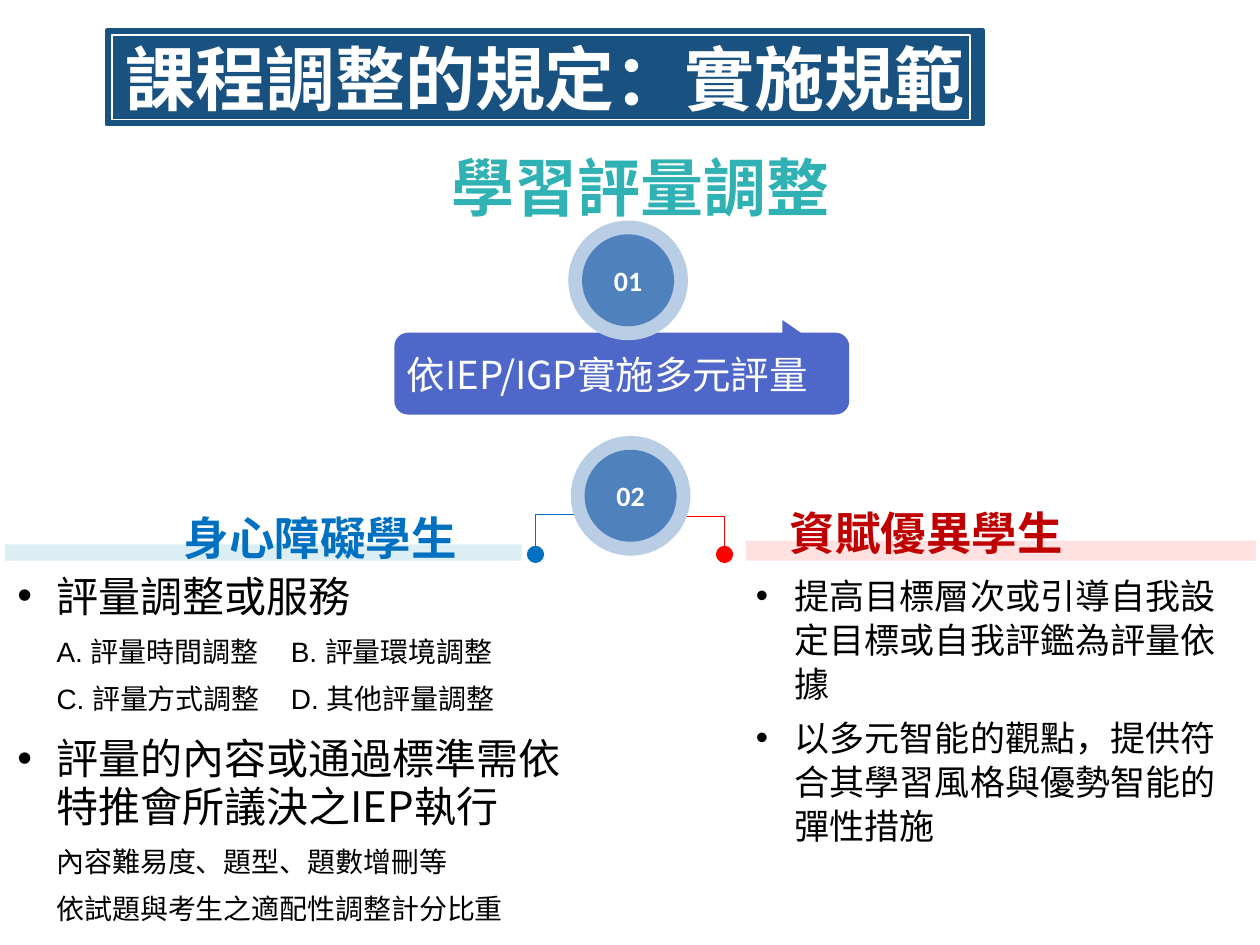
"""Build the slide on adjusting learning assessment."""
from dataclasses import dataclass
from typing import Optional

from lxml.etree import SubElement
from pptx import Presentation
from pptx.dml.color import RGBColor
from pptx.enum.shapes import MSO_CONNECTOR, MSO_SHAPE
from pptx.enum.text import MSO_ANCHOR, PP_ALIGN
from pptx.oxml.ns import qn
from pptx.util import Inches, Pt

WHITE = RGBColor(0xFF, 0xFF, 0xFF)
BLACK = RGBColor(0, 0, 0)
NAVY = RGBColor(0x19, 0x52, 0x80)
TEAL = RGBColor(0x30, 0xB1, 0xB3)
INDIGO = RGBColor(0x4E, 0x67, 0xC8)
RING = RGBColor(0xB9, 0xCD, 0xE5)
DISC = RGBColor(0x4F, 0x81, 0xBD)
BLUE = RGBColor(0x00, 0x70, 0xC0)
RED = RGBColor(0xFF, 0, 0)
CRIMSON = RGBColor(0xC0, 0, 0)
PALE_BLUE = RGBColor(0xDB, 0xEE, 0xF4)
PALE_RED = RGBColor(0xFF, 0xE1, 0xE1)
NOTO = "Noto Sans CJK SC"
Box = tuple[float, float, float, float]


@dataclass
class Style:
    """Look of a run of text."""
    size: float
    color: RGBColor
    face: str = "Calibri"
    bold: bool = True


@dataclass
class Badge:
    """Numbered disc in a ring."""
    label: str
    left: float
    top: float


@dataclass
class Link:
    """Elbow line ending in a dot."""
    start: tuple[float, float]
    end: tuple[float, float]
    turn: int
    color: RGBColor


@dataclass
class Item:
    """Bullet with smaller lines below it."""
    head: str
    notes: tuple[str, ...] = ()


@dataclass
class Column:
    """List of bullets for one group of students."""
    box: Box
    size: float
    pitch: float
    gap: float
    items: tuple[Item, ...]


BADGES = (Badge("01", 4.51, 1.75), Badge("02", 4.53, 3.46))
LINKS = (
    Link((5.81, 3.85), (5.2, 4.34), 270, RED),
    Link((4.18, 3.83), (4.82, 4.33), 90, BLUE),
)
COLUMNS = (
    Column((0.04, 4.5, 4.58, 2.92), 24, 27, 12, (
        Item("評量調整或服務", ("A. 評量時間調整\tB. 評量環境調整",
                          "C. 評量方式調整\tD. 其他評量調整")),
        Item("評量的內容或通過標準需依特推會所議決之IEP執行",
             ("內容難易度、題型、題數增刪等", "依試題與考生之適配性調整計分比重")),
    )),
    Column((5.9, 4.5, 4.06, 2.29), 20, 25, 6, (
        Item("提高目標層次或引導自我設定目標或自我評鑑為評量依據"),
        Item("以多元智能的觀點，提供符合其學習風格與優勢智能的彈性措施"),
    )),
)


def paint(run, style: Style) -> None:
    """Apply a style to a run."""
    font = run.font
    font.name, font.size, font.bold = style.face, Pt(style.size), style.bold
    font.color.rgb = style.color


def write(shape, text: str, style: Style, align=PP_ALIGN.LEFT):
    """Put one styled paragraph in a shape."""
    shape.text_frame.text = text
    para = shape.text_frame.paragraphs[0]
    para.alignment = align
    paint(para.runs[0], style)
    return para


def form(slide, kind, box: Box, fill: Optional[RGBColor],
         line: Optional[RGBColor] = None, width: float = 1):
    """Add a flat preset shape."""
    shape = slide.shapes.add_shape(kind, *map(Inches, box))
    shape.shadow.inherit = False
    if fill is None:
        shape.fill.background()
    else:
        shape.fill.solid()
        shape.fill.fore_color.rgb = fill
    if line is None:
        shape.line.fill.background()
    else:
        shape.line.color.rgb = line
        shape.line.width = Pt(width)
    shape.text_frame.vertical_anchor = MSO_ANCHOR.MIDDLE
    return shape


def label(slide, box: Box, text: str, style: Style, align=PP_ALIGN.LEFT):
    """Add a wrapped text box with one paragraph."""
    shape = slide.shapes.add_textbox(*map(Inches, box))
    shape.text_frame.word_wrap = True
    return write(shape, text, style, align)


def join(slide, link: Link) -> None:
    """Add an elbow line with a dot at its end."""
    ends = map(Inches, link.start + link.end)
    wire = slide.shapes.add_connector(MSO_CONNECTOR.ELBOW, *ends)
    wire.line.color.rgb = link.color
    wire.line.width = Pt(0.5)
    props = wire._element.spPr
    props.find(qn("a:xfrm")).set("rot", str(link.turn * 60000))
    SubElement(props.find(qn("a:ln")), qn("a:tailEnd"),
               type="oval", w="lg", len="lg")
    SubElement(props, qn("a:effectLst"))


def stamp(slide, badge: Badge) -> None:
    """Add a ring and its numbered disc."""
    left, top = badge.left, badge.top
    form(slide, MSO_SHAPE.OVAL, (left, top, 0.95, 0.95), RING)
    disc = form(slide, MSO_SHAPE.OVAL,
                (left + 0.11, top + 0.11, 0.73, 0.73), DISC)
    write(disc, badge.label, Style(16, WHITE), PP_ALIGN.CENTER)


def fill_list(slide, column: Column) -> None:
    """Add a bulleted column."""
    frame = slide.shapes.add_textbox(*map(Inches, column.box)).text_frame
    frame.word_wrap = True
    for index, item in enumerate(column.items):
        para = frame.add_paragraph() if index else frame.paragraphs[0]
        para.text = "\n".join((item.head, *item.notes))
        para.line_spacing = Pt(column.pitch)
        if index:
            para.space_before = Pt(column.gap)
        props = para._p.get_or_add_pPr()
        props.set("marL", str(Inches(0.31)))
        props.set("indent", str(-Inches(0.31)))
        SubElement(props, qn("a:buFont"), typeface="Arial")
        SubElement(props, qn("a:buChar"), char="•")
        if any("\t" in note for note in item.notes):
            tabs = SubElement(props, qn("a:tabLst"))
            SubElement(tabs, qn("a:tab"), pos=str(Inches(2.17)), algn="l")
        head, *notes = para.runs
        paint(head, Style(column.size, BLACK, NOTO, False))
        for note in notes:
            paint(note, Style(16, BLACK, "Arial", False))


def main() -> None:
    """Draw the slide and save it."""
    deck = Presentation()
    deck.slide_width, deck.slide_height = Inches(10), Inches(7.5)
    slide = deck.slides.add_slide(deck.slide_layouts[6])
    rect = MSO_SHAPE.RECTANGLE
    form(slide, rect, (0.04, 4.32, 4.1, 0.13), PALE_BLUE)
    form(slide, rect, (5.92, 4.29, 4.05, 0.16), PALE_RED)
    gifted = label(slide, (6.17, 4.04, 3.32, 0.52), "資賦優異學生",
                   Style(26, CRIMSON))
    gifted.line_spacing = 0.8
    label(slide, (1.36, 4, 3.48, 0.61), "身心障礙學生", Style(26, BLUE))
    for link in LINKS:
        join(slide, link)
    form(slide, MSO_SHAPE.ROUNDED_RECTANGLE, (3.13, 2.64, 3.61, 0.65), INDIGO)
    notch = form(slide, MSO_SHAPE.ISOSCELES_TRIANGLE,
                 (6.12, 2.63, 0.65, 0.47), INDIGO)
    notch.rotation = 90
    for badge in BADGES:
        stamp(slide, badge)
    label(slide, (3.13, 2.74, 4.1, 0.47), "依IEP/IGP實施多元評量",
          Style(22, WHITE, NOTO, False))
    for column in COLUMNS:
        fill_list(slide, column)
    title = form(slide, rect, (0.85, 0.24, 6.95, 0.75), NAVY, NAVY, 2)
    write(title, "課程調整的規定：實施規範", Style(40, WHITE, NOTO),
          PP_ALIGN.CENTER)
    form(slide, rect, (0.89, 0.28, 6.81, 0.67), None, WHITE)
    topic = label(slide, (0.63, 1.01, 8.91, 1.22), "學習評量調整",
                  Style(36, TEAL), PP_ALIGN.CENTER)
    topic.line_spacing = 1.2
    deck.save("out.pptx")


if __name__ == "__main__":
    main()
